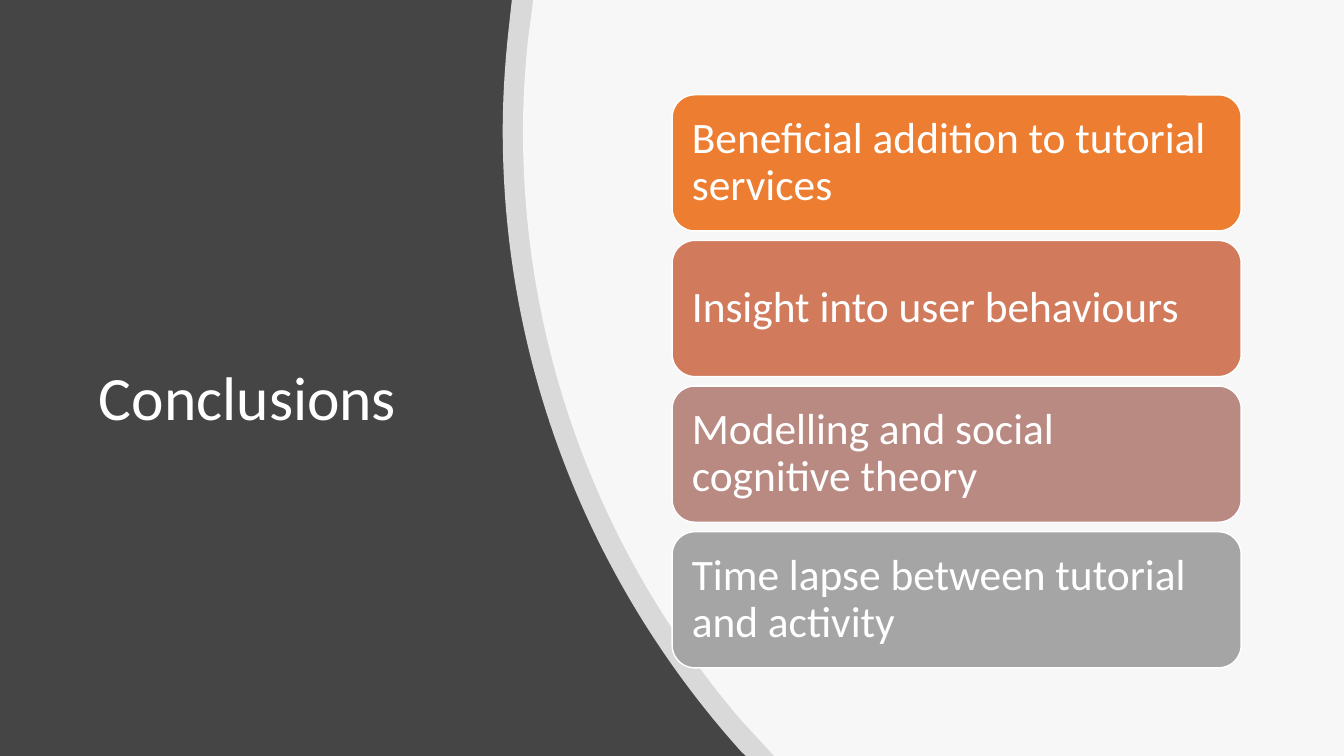
import collections

import pptx
import pptx.dml.color
import pptx.enum.shapes
import pptx.enum.text
import pptx.oxml.ns
import pptx.util
from lxml import etree

Cm = pptx.util.Cm
qn = pptx.oxml.ns.qn
Box = collections.namedtuple("Box", "left top width height")

FONT = "Calibri"
WHITE = "FFFFFF"
BACKGROUND = "454545"
PAGE = Box(0, 0, 33.87, 19.05)
CARDS = [
    ("Beneficial addition to tutorial services", "ED7D31"),
    ("Insight into user behaviours", "D17B5C"),
    ("Modelling and social cognitive theory", "B98A82"),
    ("Time lapse between tutorial and activity", "A5A5A5"),
]

# Left edge of each layer, from the foot of the page upwards:
# foot, start of the arc, two cubic curves, and the point at the top.
OUTER_EDGE = [
    (18.8, 19.05), (18.69, 18.95),
    (14.96, 14.81), (12.67, 9.32), (12.67, 3.3),
    (12.67, 2.49), (12.72, 1.7), (12.8, 0.91),
    (12.9, 0),
]
INNER_EDGE = [
    (19.51, 19.05), (18.69, 18.16),
    (15.27, 14.17), (13.18, 8.99), (13.18, 3.3),
    (13.18, 2.51), (13.23, 1.75), (13.31, 0.97),
    (13.44, 0),
]


def paint(color_fill, color):
    """Give a fill one solid colour."""
    color_fill.solid()
    color_fill.fore_color.rgb = pptx.dml.color.RGBColor.from_string(color)


def write(shape, text, size):
    """Put one left-aligned, vertically centred paragraph in a shape."""
    frame = shape.text_frame
    frame.text = text
    frame.word_wrap = True
    frame.auto_size = pptx.enum.text.MSO_AUTO_SIZE.NONE
    frame.vertical_anchor = pptx.enum.text.MSO_ANCHOR.MIDDLE
    para = frame.paragraphs[0]
    para.alignment = pptx.enum.text.PP_ALIGN.LEFT
    para.line_spacing = 0.9
    span = para.runs[0]
    span.font.name = FONT
    span.font.size = pptx.util.Pt(size)
    paint(span.font.fill, WHITE)


def bend(lines):
    """Turn three successive line segments into one cubic curve."""
    curve = etree.Element(qn("a:cubicBezTo"))
    lines[0].addprevious(curve)
    for line in lines:
        curve.append(line[0])
        line.getparent().remove(line)


def add_curved_layer(page, box, edge):
    """Cover the box to the right of the edge with translucent white."""
    right, bottom = box.left + box.width, box.top + box.height
    outline = [(right, box.top), (right, bottom)]
    outline += [(box.left + x, box.top + y) for x, y in edge[:-1]]
    start_x, start_y = edge[-1]
    builder = page.shapes.build_freeform(
        Cm(box.left + start_x), Cm(box.top + start_y), scale=1.0)
    builder.add_line_segments([(Cm(x), Cm(y)) for x, y in outline], close=True)
    layer = builder.convert_to_shape()
    lines = list(layer.element.iter(qn("a:lnTo")))
    bend(lines[4:7])
    bend(lines[7:10])
    layer.shadow.inherit = False
    layer.line.fill.background()
    paint(layer.fill, WHITE)
    color = layer.element.spPr.find(qn("a:solidFill"))[0]
    etree.SubElement(color, qn("a:alpha"), val="80000")


def add_title(page, box, text):
    """Move the title placeholder to the box and fill it."""
    title = page.shapes.title
    title.left, title.top, title.width, title.height = map(Cm, box)
    write(title, text, 44)


def add_cards(page, box, cards, gap=0.24):
    """Stack equal rounded cards down the box."""
    height = (box.height - gap * (len(cards) - 1)) / len(cards)
    for index, (text, color) in enumerate(cards):
        top = box.top + index * (height + gap)
        card = page.shapes.add_shape(
            pptx.enum.shapes.MSO_SHAPE.ROUNDED_RECTANGLE,
            Cm(box.left), Cm(top), Cm(box.width), Cm(height))
        card.shadow.inherit = False
        paint(card.fill, color)
        paint(card.line.fill, WHITE)
        card.line.width = pptx.util.Pt(1)
        write(card, text, 31)
        # The rounded corners add their own inset at the sides
        frame = card.text_frame
        frame.margin_left = frame.margin_right = Cm(0.33)
        frame.margin_top = frame.margin_bottom = Cm(0.33)


def build_conclusions(deck):
    """Title on the dark side, cards on the light curved side."""
    page = deck.slides.add_slide(deck.slide_layouts.get_by_name("Title Only"))
    paint(page.background.fill, BACKGROUND)
    add_title(page, Box(2.24, 3.87, 9.96, 12.45), "Conclusions")
    for edge in (OUTER_EDGE, INNER_EDGE):
        add_curved_layer(page, PAGE, edge)
    add_cards(page, Box(16.94, 2.39, 14.34, 14.44), CARDS)


def main():
    deck = pptx.Presentation()
    deck.slide_width = Cm(PAGE.width)
    deck.slide_height = Cm(PAGE.height)
    build_conclusions(deck)
    deck.save("out.pptx")


if __name__ == "__main__":
    main()
